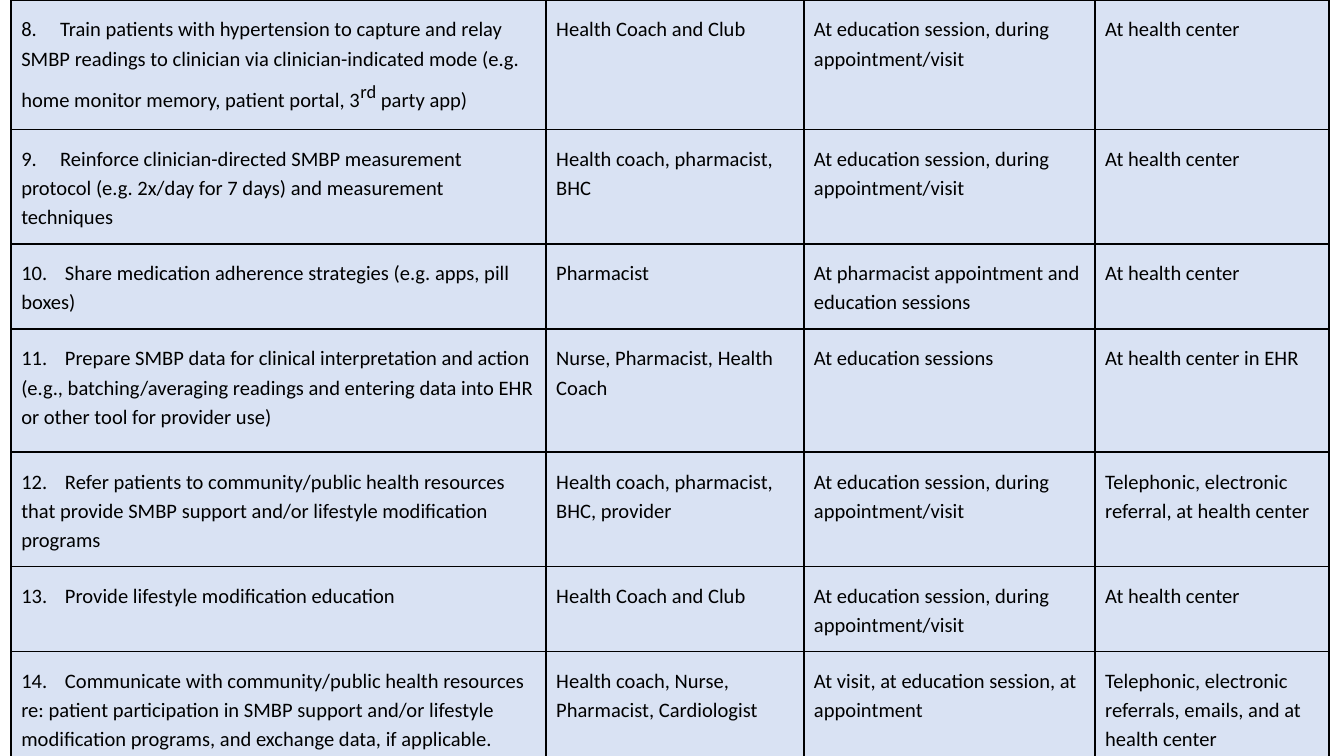
"""Build a slide with a table of blood pressure monitoring tasks, staff, times and places."""
import lxml.etree
import pptx
import pptx.dml.color
import pptx.oxml.ns
import pptx.util

Pt = pptx.util.Pt
qn = pptx.oxml.ns.qn

EDUCATION = "At education session, during appointment/visit"
CENTER = "At health center"
FIRST_NUMBER = 8
TASKS = [
    (["Train patients with hypertension to capture and relay SMBP readings to clinician via "
      "clinician-indicated mode (e.g. home monitor memory, patient portal, 3", "rd", " party app)"],
     "Health Coach and Club", EDUCATION, CENTER),
    (["Reinforce clinician-directed SMBP measurement protocol (e.g. 2x/day for 7 days) "
      "and measurement techniques"],
     "Health coach, pharmacist, BHC", EDUCATION, CENTER),
    (["Share medication adherence strategies (e.g. apps, pill boxes)"],
     "Pharmacist", "At pharmacist appointment and education sessions", CENTER),
    (["Prepare SMBP data for clinical interpretation and action (e.g., batching/averaging "
      "readings and entering data into EHR or other tool for provider use)"],
     "Nurse, Pharmacist, Health Coach", "At education sessions", "At health center in EHR"),
    (["Refer patients to community/public health resources that provide SMBP support "
      "and/or lifestyle modification programs"],
     "Health coach, pharmacist, BHC, provider", EDUCATION,
     "Telephonic, electronic referral, at health center"),
    (["Provide lifestyle modification education"],
     "Health Coach and Club", EDUCATION, CENTER),
    (["Communicate with community/public health resources re: patient participation in SMBP "
      "support and/or lifestyle modification programs, and exchange data, if applicable."],
     "Health coach, Nurse, Pharmacist, Cardiologist",
     "At visit, at education session, at appointment",
     "Telephonic, electronic referrals, emails, and at health center"),
]

THEME = {"font": "Calibri", "text": "000000", "fill": "D9E2F3", "border": "000000",
         "size": 11, "ordinal_size": 17}
SLIDE_SIZE = (720, 405)
TABLE_LEFT, TABLE_TOP = 6, 0
COLUMN_WIDTHS = [286.6, 138.1, 156, 125.2]
ROW_HEIGHTS = [66, 52.5, 39, 66, 52.5, 39, 66]
CELL_FORMAT = {"margin_left": Pt(5.4), "margin_right": Pt(5.8),
               "margin_top": Pt(7.2), "margin_bottom": Pt(7.2)}


def set_values(target, values):
    """Set each named attribute of the target."""
    for name, value in values.items():
        setattr(target, name, value)


def add_borders(cell):
    """Draw a solid line on all four sides of a cell."""
    properties = cell._tc.get_or_add_tcPr()
    for position, side in enumerate(("a:lnL", "a:lnR", "a:lnT", "a:lnB")):
        line = lxml.etree.Element(qn(side), w=str(Pt(1)))
        fill = lxml.etree.SubElement(line, qn("a:solidFill"))
        lxml.etree.SubElement(fill, qn("a:srgbClr"), val=THEME["border"])
        properties.insert(position, line)


def add_tab_stop(para, position):
    """Set one left tab stop on a paragraph."""
    tabs = lxml.etree.SubElement(para._p.get_or_add_pPr(), qn("a:tabLst"))
    lxml.etree.SubElement(tabs, qn("a:tab"), pos=str(Pt(position)), algn="l")


def add_span(para, text, size):
    """Add a run in the slide's font."""
    span = para.add_run()
    span.text = text
    set_values(span.font, {"name": THEME["font"], "size": Pt(size)})
    span.font.color.rgb = pptx.dml.color.RGBColor.from_string(THEME["text"])
    return span


def fill_cell(cell, texts, space_after):
    """Format a cell and write its runs, every second one raised."""
    set_values(cell, CELL_FORMAT)
    cell.fill.solid()
    cell.fill.fore_color.rgb = pptx.dml.color.RGBColor.from_string(THEME["fill"])
    add_borders(cell)
    para = cell.text_frame.paragraphs[0]
    set_values(para, {"line_spacing": 1.15, "space_before": Pt(0), "space_after": Pt(space_after)})
    for index, text in enumerate(texts):
        raised = index % 2 == 1
        span = add_span(para, text, THEME["ordinal_size" if raised else "size"])
        if raised:
            span.font._element.set("baseline", "30000")
    return para


def main():
    """Build and save the deck."""
    deck = pptx.Presentation()
    deck.slide_width, deck.slide_height = map(Pt, SLIDE_SIZE)
    page = deck.slides.add_slide(deck.slide_layouts[6])
    table = page.shapes.add_table(
        len(TASKS), len(COLUMN_WIDTHS), Pt(TABLE_LEFT), Pt(TABLE_TOP),
        Pt(sum(COLUMN_WIDTHS)), Pt(sum(ROW_HEIGHTS))).table
    set_values(table, {"first_row": False, "horz_banding": False})
    for column, width in zip(table.columns, COLUMN_WIDTHS):
        column.width = Pt(width)
    for row, height in zip(table.rows, ROW_HEIGHTS):
        row.height = Pt(height)

    for index, (task, *details) in enumerate(TASKS):
        number = FIRST_NUMBER + index
        numbered = [f"{number}.\t{task[0]}", *task[1:]]
        para = fill_cell(table.cell(index, 0), numbered, 0)
        add_tab_stop(para, 20.8 if number < 10 else 23.4)
        for column, detail in enumerate(details, 1):
            fill_cell(table.cell(index, column), [detail], 3)
    deck.save("out.pptx")


if __name__ == "__main__":
    main()
